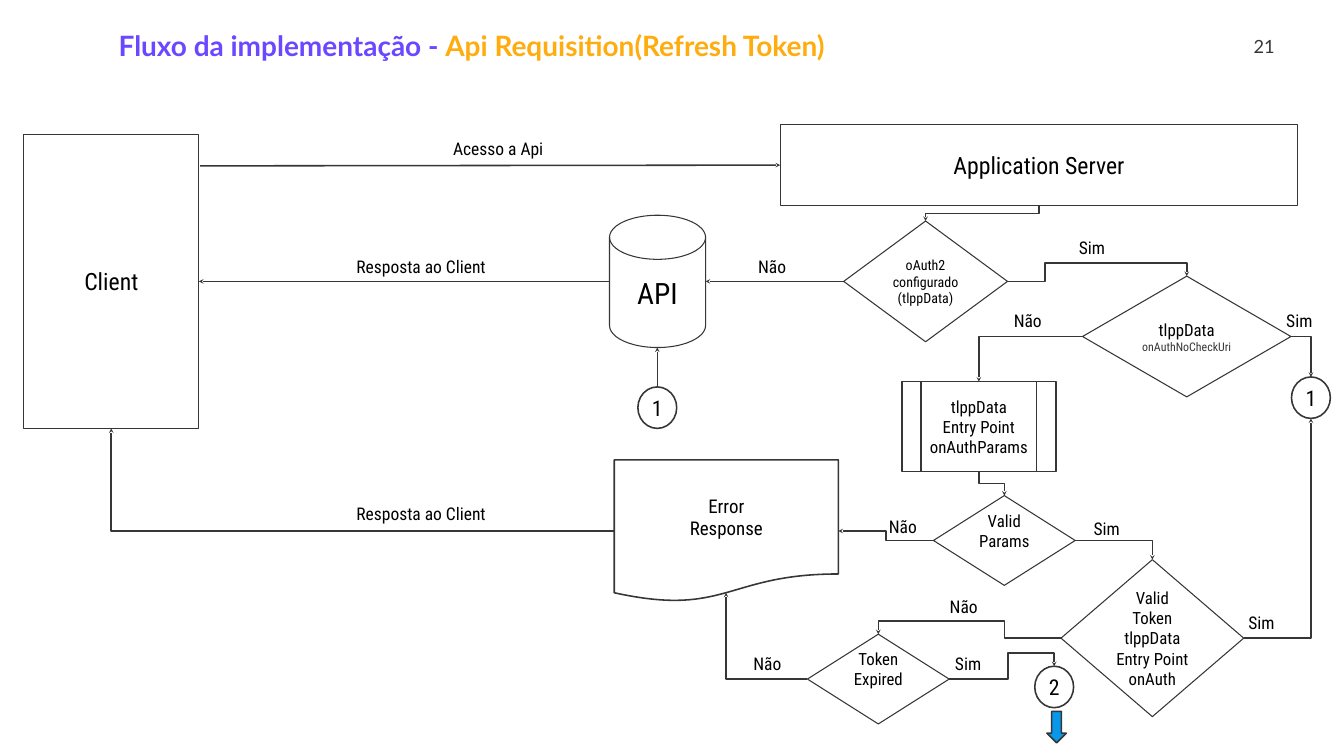
"""Build the API request flow slide for the refresh token."""
from dataclasses import dataclass

from lxml import etree
from pptx import Presentation
from pptx.dml.color import RGBColor
from pptx.enum.shapes import MSO_CONNECTOR, MSO_SHAPE
from pptx.enum.text import MSO_ANCHOR, PP_ALIGN
from pptx.oxml.ns import qn
from pptx.util import Pt

PX = 9525
RECTANGLE = MSO_SHAPE.RECTANGLE
DECISION = MSO_SHAPE.FLOWCHART_DECISION
PROCESS = MSO_SHAPE.FLOWCHART_PREDEFINED_PROCESS
DOCUMENT = MSO_SHAPE.FLOWCHART_DOCUMENT
CIRCLE = MSO_SHAPE.FLOWCHART_CONNECTOR
DISK = MSO_SHAPE.FLOWCHART_MAGNETIC_DISK
DOWN_ARROW = MSO_SHAPE.DOWN_ARROW
STRAIGHT, ELBOW = MSO_CONNECTOR.STRAIGHT, MSO_CONNECTOR.ELBOW
LEFT, CENTER, RIGHT = PP_ALIGN.LEFT, PP_ALIGN.CENTER, PP_ALIGN.RIGHT
TOP, MIDDLE = MSO_ANCHOR.TOP, MSO_ANCHOR.MIDDLE
SITE_TOP, SITE_LEFT, SITE_BOTTOM, SITE_RIGHT = range(4)


@dataclass(frozen=True)
class Theme:
    purple: RGBColor = RGBColor(0x6B, 0x48, 0xFF)
    orange: RGBColor = RGBColor(0xFE, 0xAC, 0x0E)
    blue: RGBColor = RGBColor(0x08, 0x97, 0xE9)
    gray: RGBColor = RGBColor(0x36, 0x36, 0x36)
    black: RGBColor = RGBColor(0, 0, 0)
    heading_font: str = "Lato"
    body_font: str = "Roboto Condensed"
    title: int = 40
    page: int = 26
    api: int = 42
    box: int = 34
    badge: int = 31
    error: int = 27
    label: int = 25
    step: int = 24
    check: int = 20
    detail: int = 17
    thin: float = 1.5
    thick: float = 2.25


theme = Theme()


def write(shape, text, size, align=CENTER, anchor=MIDDLE, font=theme.body_font,
          color=theme.black, inset=10, lift=0):
    frame = shape.text_frame
    frame.word_wrap = True
    frame.vertical_anchor = anchor
    frame.margin_left = frame.margin_right = 10 * PX
    frame.margin_top = inset * PX
    frame.margin_bottom = (inset + lift) * PX
    frame.text = text
    for paragraph in frame.paragraphs:
        paragraph.alignment = align
        paragraph.font.name = font
        paragraph.font.size = Pt(size)
        paragraph.font.color.rgb = color


def connect(begin, end, preset="line", adjustments=(), vertical=False):
    kind = STRAIGHT if preset == "line" else ELBOW
    connector = slide.shapes.add_connector(kind, 0, 0, 0, 0)
    if isinstance(begin[0], str):
        connector.begin_connect(nodes[begin[0]], begin[1])
    else:
        connector.begin_x, connector.begin_y = begin[0] * PX, begin[1] * PX
    if isinstance(end[0], str):
        connector.end_connect(nodes[end[0]], end[1])
    else:
        connector.end_x, connector.end_y = end[0] * PX, end[1] * PX
    connector.line.color.rgb = theme.gray
    connector.line.width = Pt(theme.thick)
    properties = connector.element.spPr
    if vertical:
        rightward = connector.end_x > connector.begin_x
        left, top, width, height = connector.left, connector.top, connector.width, connector.height
        connector.left, connector.top = left + (width - height) // 2, top + (height - width) // 2
        connector.width, connector.height = height, width
        transform = properties.find(qn("a:xfrm"))
        transform.set("rot", "16200000" if rightward else "5400000")
        transform.set("flipH", "1" if rightward else "0")
    geometry = properties.find(qn("a:prstGeom"))
    geometry.set("prst", preset)
    for number, value in enumerate(adjustments, 1):
        guide = etree.SubElement(geometry.find(qn("a:avLst")), qn("a:gd"))
        guide.set("name", f"adj{number}")
        guide.set("fmla", f"val {round(value * 100000)}")
    etree.SubElement(properties.find(qn("a:ln")), qn("a:tailEnd")).set("type", "stealth")
    etree.SubElement(properties, qn("a:effectLst"))


presentation = Presentation()
presentation.slide_width, presentation.slide_height = 2560 * PX, 1440 * PX
slide = presentation.slides.add_slide(presentation.slide_layouts[5])

title = slide.shapes.title
title.left, title.top, title.width, title.height = 216 * PX, 50 * PX, 1584 * PX, 79 * PX
write(title, "Fluxo da implementação - ", theme.title, LEFT, TOP, theme.heading_font,
      theme.purple, inset=5)
heading = title.text_frame.paragraphs[0]
heading.font.bold = True
accent = heading.add_run()
accent.text = "Api Requisition(Refresh Token)"
accent.font.color.rgb = theme.orange

page_number = slide.shapes.add_textbox(2332 * PX, 48 * PX, 106 * PX, 79 * PX)
write(page_number, "21", theme.page, RIGHT, MIDDLE, theme.heading_font, theme.gray, inset=5)

nodes = {}
for name, kind, left, top, width, height, weight, text, size, lift in (
    ("client", RECTANGLE, 45, 256, 334, 560, theme.thin, "Client", theme.box, 0),
    ("server", RECTANGLE, 1486, 237, 986, 155, theme.thin, "Application Server", theme.box, 0),
    ("oauth", DECISION, 1607, 421, 312, 230, theme.thin,
     "oAuth2 configurado\v(tlppData)", theme.check, 0),
    ("auth params", PROCESS, 1718, 727, 293, 171, theme.thick,
     "tlppData\nEntry Point\vonAuthParams", theme.step, 0),
    ("valid params", DECISION, 1778, 944, 270, 171, theme.thin,
     "Valid\vParams", theme.step, 38),
    ("error", DOCUMENT, 1170, 876, 427, 271, theme.thick, "Error\nResponse", theme.error, 0),
    ("valid token", DECISION, 2021, 1066, 348, 299, theme.thin,
     "Valid\vToken\vtlppData\nEntry Point\vonAuth", theme.step, 0),
    ("no check", DECISION, 2062, 526, 397, 230, theme.thin, "tlppData\v", theme.step, 0),
    ("api", DISK, 1161, 410, 183, 252, theme.thin, "API", theme.api, 0),
    ("expired", DECISION, 1538, 1208, 270, 171, theme.thin, "Token\vExpired", theme.step, 38),
    ("one right", CIRCLE, 2460, 718, 74, 79, theme.thick, "1", theme.badge, 0),
    ("one api", CIRCLE, 1215, 737, 74, 79, theme.thick, "1", theme.badge, 0),
    ("two", CIRCLE, 1971, 1269, 74, 79, theme.thick, "2", theme.badge, 0),
    ("next", DOWN_ARROW, 1994, 1355, 37, 60, theme.thick, "", theme.step, 0),
):
    shape = slide.shapes.add_shape(kind, left * PX, top * PX, width * PX, height * PX)
    shape.shadow.inherit = False
    shape.fill.background()
    shape.line.color.rgb = theme.gray
    shape.line.width = Pt(weight)
    write(shape, text, size, lift=lift)
    nodes[name] = shape

nodes["next"].fill.solid()
nodes["next"].fill.fore_color.rgb = theme.blue
detail = nodes["no check"].text_frame.paragraphs[0].add_run()
detail.text = "onAuthNoCheckUri"
detail.font.size = Pt(theme.detail)
detail.font.color.rgb = theme.gray

connect((381, 316), ("server", SITE_LEFT))
connect(("oauth", SITE_LEFT), (1344, 536))
connect((1161, 536), ("client", SITE_RIGHT))
connect(("one api", SITE_TOP), (1252, 662))
connect(("server", SITE_BOTTOM), ("oauth", SITE_TOP), "bentConnector3", (0.5,), vertical=True)
connect(("auth params", SITE_BOTTOM), ("valid params", SITE_TOP), "bentConnector3", (0.5,),
        vertical=True)
connect(("valid params", SITE_LEFT), ("error", SITE_RIGHT), "bentConnector3", (0.5,))
connect(("valid params", SITE_RIGHT), ("valid token", SITE_TOP), "bentConnector2")
connect(("valid token", SITE_RIGHT), (2497, 797), "bentConnector2")
connect(("no check", SITE_RIGHT), ("one right", SITE_TOP), "bentConnector2")
connect(("no check", SITE_LEFT), ("auth params", SITE_TOP), "bentConnector2")
connect(("error", SITE_LEFT), ("client", SITE_BOTTOM), "bentConnector2")
connect(("expired", SITE_LEFT), (1383, 1129), "bentConnector2")
connect(("oauth", SITE_RIGHT), ("no check", SITE_TOP), "bentConnector4", (0.21, 3.5))
connect(("valid token", SITE_LEFT), ("expired", SITE_TOP), "bentConnector4", (0.31, 4.4))
connect(("expired", SITE_RIGHT), ("two", SITE_TOP), "bentConnector4", (0.56, 2.04))

for text, left, top, width in (
    ("Acesso a Api", 853, 252, 215),
    ("Resposta ao Client", 669, 477, 293),
    ("Resposta ao Client", 669, 948, 293),
    ("Sim", 2045, 442, 85),
    ("Sim", 2440, 580, 74),
    ("Sim", 2073, 977, 74),
    ("Sim", 2368, 1156, 74),
    ("Sim", 1809, 1234, 74),
    ("Não", 1434, 478, 74),
    ("Não", 1921, 581, 85),
    ("Não", 1683, 972, 85),
    ("Não", 1799, 1126, 85),
    ("Não", 1425, 1233, 74),
):
    label = slide.shapes.add_textbox(left * PX, top * PX, width * PX, 60 * PX)
    write(label, text, theme.label, LEFT, TOP)

presentation.save("out.pptx")
